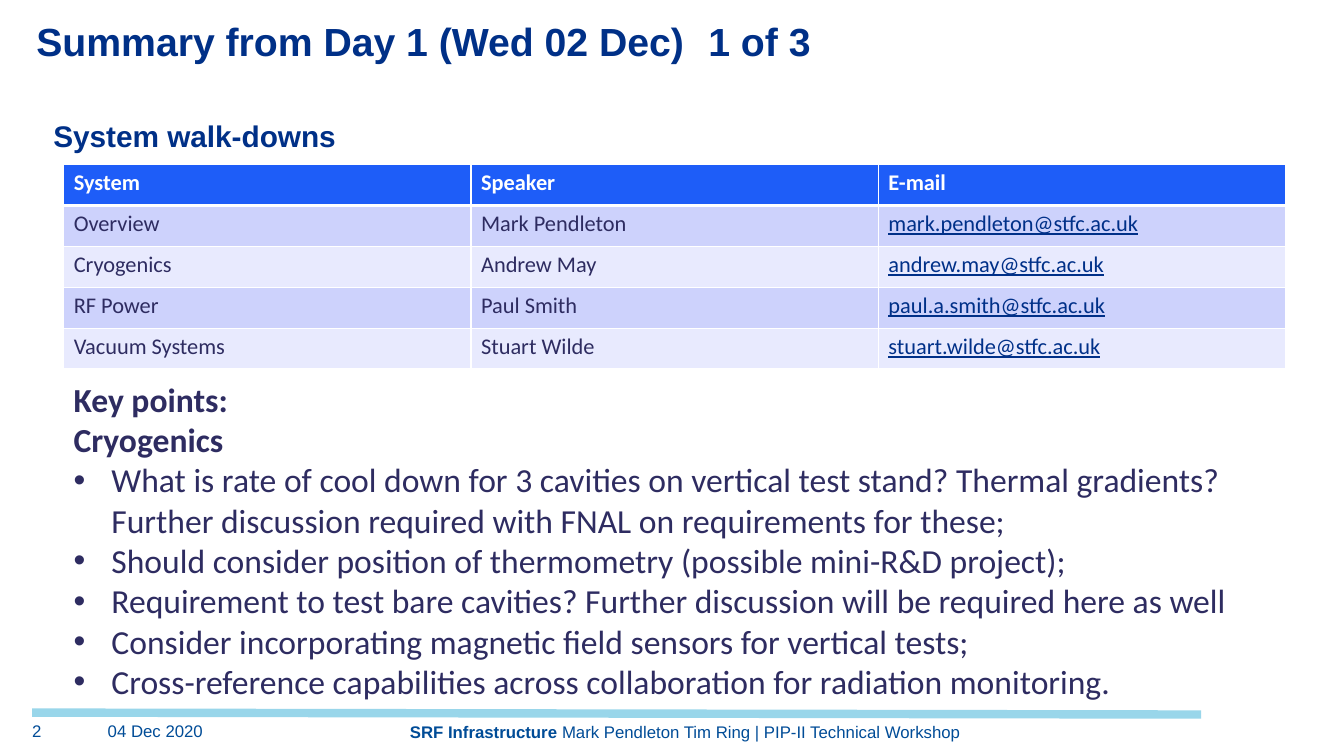
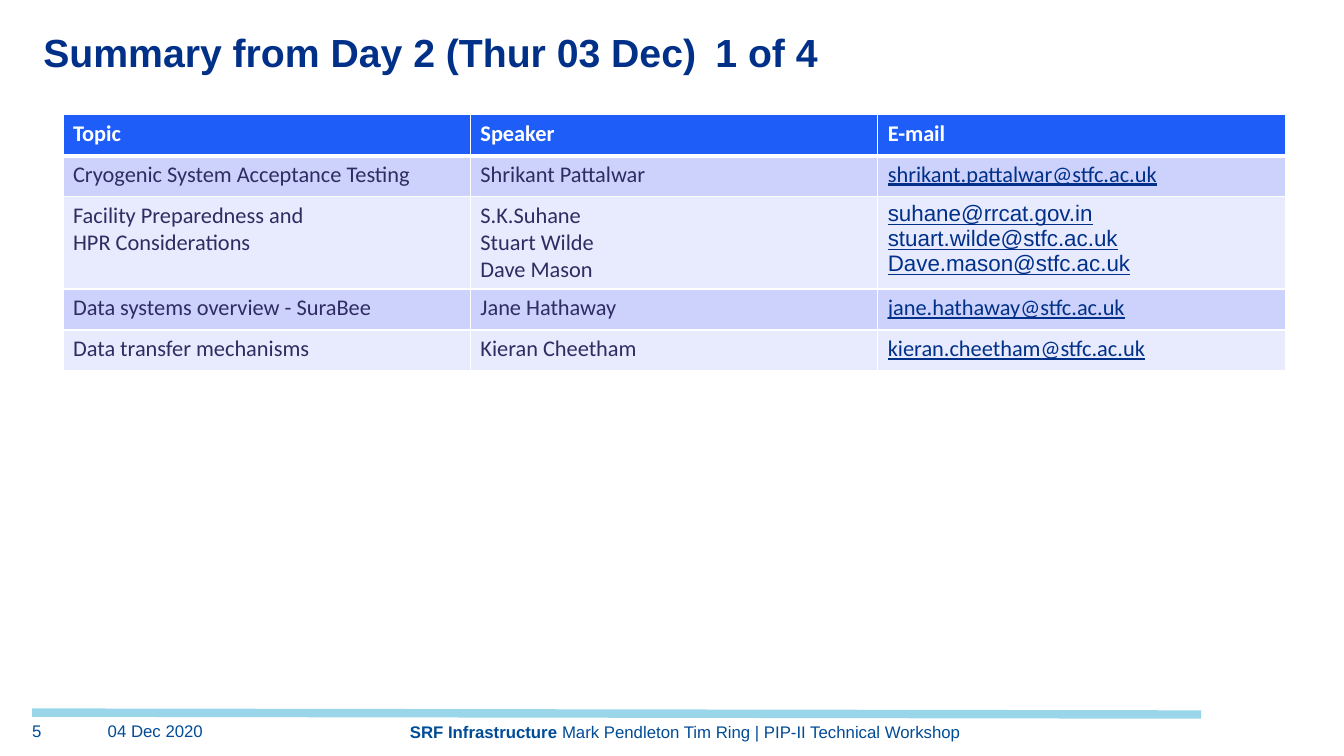
from dataclasses import dataclass

from lxml import etree
from pptx import Presentation
from pptx.dml.color import RGBColor
from pptx.enum import shapes, text
from pptx.oxml import ns
from pptx.util import Pt


@dataclass(frozen=True)
class Theme:
    navy: str = "003087"
    foot: str = "004C97"
    band: str = "99D6EA"
    head: str = "1E5DF8"
    ink: str = "2E2C61"
    link: str = "003088"
    white: str = "FFFFFF"
    rows: tuple = ("CDD2FC", "E8EAFE")
    sans: str = "Arial"
    body: str = "Calibri"
    title: float = 28
    sub: float = 21.3
    point: float = 24
    cell: float = 16
    small: float = 12


T = Theme()
ROW = 29.25
LINE = 28.8


def sub(node, tag, **attrs):
    return etree.SubElement(node, ns.qn(tag), attrs)


def add_run(para, words, size, face, color, bold=False, under=False):
    run = para.add_run()
    run.text = words
    font = run.font
    font.size, font.name = Pt(size), face
    font.bold, font.underline = bold, under
    font.color.rgb = RGBColor.from_string(color)


def set_frame(frame, inset=True):
    frame.word_wrap = True
    frame.auto_size = text.MSO_AUTO_SIZE.NONE
    if not inset:
        frame.margin_left = frame.margin_right = 0
        frame.margin_top = frame.margin_bottom = 0
    return frame


def add_box(slide, box, inset=True):
    shape = slide.shapes.add_textbox(*map(Pt, box))
    return set_frame(shape.text_frame, inset)


def add_title(slide, box, words, part):
    """Title with its part count set at a tab stop."""
    title = slide.shapes.title
    title.left, title.top, title.width, title.height = map(Pt, box)
    frame = set_frame(title.text_frame, inset=False)
    frame.vertical_anchor = text.MSO_ANCHOR.BOTTOM
    para = frame.paragraphs[0]
    para.alignment = text.PP_ALIGN.LEFT
    tabs = sub(para._p.get_or_add_pPr(), "a:tabLst")
    sub(tabs, "a:tab", pos=str(Pt(480)), algn="l")
    add_run(para, f"{words}\t{part}", T.title, T.sans, T.navy, bold=True)


def add_foot(slide, box, number):
    """Band along the top of the box, with number, date and event below."""
    left, top, width, _ = box
    band = slide.shapes.add_connector(
        shapes.MSO_CONNECTOR.STRAIGHT,
        *map(Pt, (left, top, left + width, top + 1.4)))
    band.line.width = Pt(6)
    band.line.color.rgb = RGBColor.from_string(T.band)
    sub(band._element.spPr, "a:effectLst")

    style = (T.small, T.sans, T.foot)
    for shift, span, words in ((0, 43, number), (54, 89, "04 Dec 2020")):
        frame = add_box(slide, (left + shift, top + 5.5, span, 19), inset=False)
        add_run(frame.paragraphs[0], words, *style)
    frame = add_box(slide, (left + 138, top + 6.5, 657, 19), inset=False)
    para = frame.paragraphs[0]
    para.alignment = text.PP_ALIGN.CENTER
    add_run(para, "SRF Infrastructure ", *style, bold=True)
    add_run(para, "Mark Pendleton Tim Ring | PIP-II Technical Workshop", *style)


def set_edges(cell, base):
    props = cell._tc.get_or_add_tcPr()
    for side, width in (("L", 1), ("R", 1), ("T", 1), ("B", base)):
        edge = sub(props, f"a:ln{side}", w=str(Pt(width)))
        sub(sub(edge, "a:solidFill"), "a:srgbClr", val=T.white)


def add_cell(cell, words, row, col):
    head = row == 0
    mail = col == 2 and not head
    set_edges(cell, 3 if head else 1)
    cell.fill.solid()
    fill = T.head if head else T.rows[(row - 1) % 2]
    cell.fill.fore_color.rgb = RGBColor.from_string(fill)
    lines = words.split("\n")
    face = T.sans if mail and len(lines) > 1 else T.body
    color = T.white if head else T.link if mail else T.ink
    frame = cell.text_frame
    for i, line in enumerate(lines):
        para = frame.add_paragraph() if i else frame.paragraphs[0]
        add_run(para, line, T.cell, face, color, head, mail)


def add_grid(slide, box, data, tall=()):
    """Striped table; tall maps a row index to its height."""
    tall = dict(tall)
    high = [tall.get(i, ROW) for i in range(len(data))]
    left, top, width = box
    grid = slide.shapes.add_table(
        len(data), len(data[0]), *map(Pt, (left, top, width, sum(high)))).table
    for col in grid.columns:
        col.width = Pt(width / len(data[0]))
    for r, items in enumerate(data):
        grid.rows[r].height = Pt(high[r])
        for c, words in enumerate(items):
            add_cell(grid.cell(r, c), words, r, c)


def add_points(slide, box, heads, points):
    frame = add_box(slide, box)
    for i, words in enumerate(heads + points):
        para = frame.add_paragraph() if i else frame.paragraphs[0]
        para.line_spacing = Pt(LINE)
        head = i < len(heads)
        if not head:
            props = para._p.get_or_add_pPr()
            props.set("marL", str(Pt(27)))
            props.set("indent", str(Pt(-27)))
            sub(props, "a:buFont", typeface=T.sans)
            sub(props, "a:buChar", char="•")
        add_run(para, words, T.point, T.body, T.ink, bold=head)


def add_slide(deck, box, words, part, number):
    slide = deck.slides.add_slide(deck.slide_layouts[5])
    add_title(slide, box, words, part)
    add_foot(slide, (23, 509, 835, 26), number)
    return slide


def day_one(deck):
    slide = add_slide(deck, (26, 0, 734, 46),
                      "Summary from Day 1 (Wed 02 Dec)", "1 of 3", "2")
    frame = add_box(slide, (31, 80.5, 362, 36))
    add_run(frame.paragraphs[0], "System walk-downs",
            T.sub, T.sans, T.navy, bold=True)
    add_grid(slide, (45.5, 117.5, 873), (
        ("System", "Speaker", "E-mail"),
        ("Overview", "Mark Pendleton", "mark.pendleton@stfc.ac.uk"),
        ("Cryogenics", "Andrew May", "andrew.may@stfc.ac.uk"),
        ("RF Power", "Paul Smith", "paul.a.smith@stfc.ac.uk"),
        ("Vacuum Systems", "Stuart Wilde", "stuart.wilde@stfc.ac.uk"),
    ))
    add_points(slide, (45.5, 267, 885, 238), ("Key points:", "Cryogenics"), (
        "What is rate of cool down for 3 cavities on vertical test stand? "
        "Thermal gradients? Further discussion required with FNAL on "
        "requirements for these;",
        "Should consider position of thermometry (possible mini-R&D project);",
        "Requirement to test bare cavities? Further discussion will be "
        "required here as well",
        "Consider incorporating magnetic field sensors for vertical tests;",
        "Cross-reference capabilities across collaboration for radiation "
        "monitoring.",
    ))


def day_two(deck):
    slide = add_slide(deck, (31, 8, 734, 46),
                      "Summary from Day 2 (Thur 03 Dec)", "1 of 4", "5")
    add_grid(slide, (45, 82, 873), (
        ("Topic", "Speaker", "E-mail"),
        ("Cryogenic System Acceptance Testing", "Shrikant Pattalwar",
         "shrikant.pattalwar@stfc.ac.uk"),
        ("Facility Preparedness and\nHPR Considerations",
         "S.K.Suhane\nStuart Wilde\nDave Mason",
         "suhane@rrcat.gov.in\nstuart.wilde@stfc.ac.uk\n"
         "Dave.mason@stfc.ac.uk"),
        ("Data systems overview - SuraBee", "Jane Hathaway",
         "jane.hathaway@stfc.ac.uk"),
        ("Data transfer mechanisms", "Kieran Cheetham",
         "kieran.cheetham@stfc.ac.uk"),
    ), {2: 66})


def main():
    deck = Presentation()
    deck.slide_width, deck.slide_height = Pt(960), Pt(540)
    day_one(deck)
    day_two(deck)
    deck.save("out.pptx")


if __name__ == "__main__":
    main()
